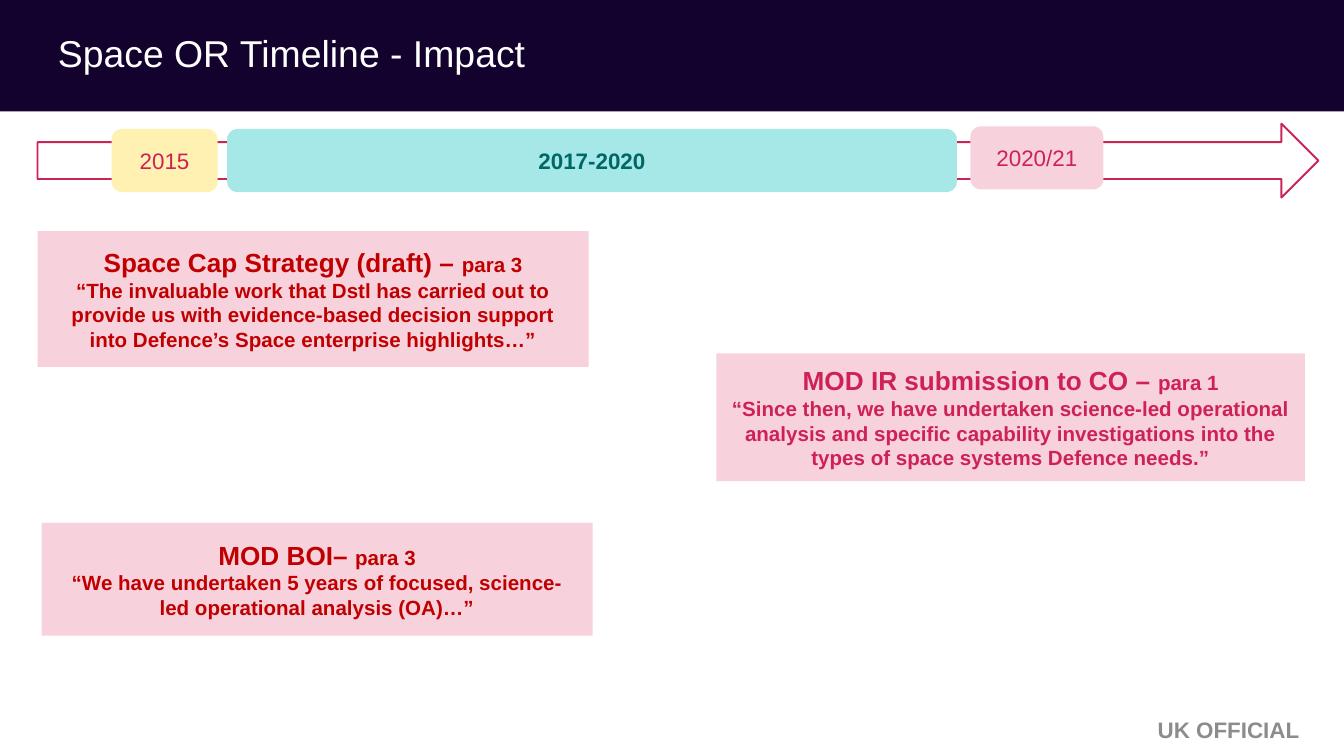
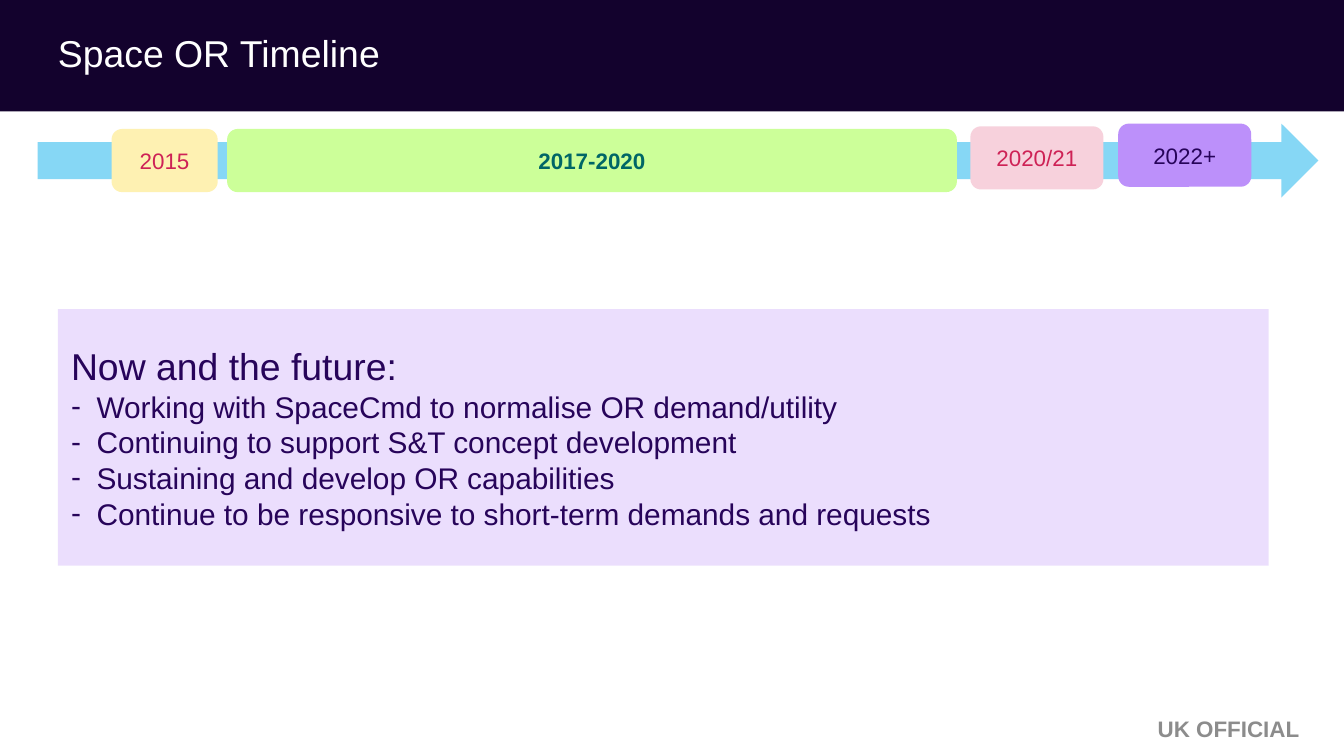
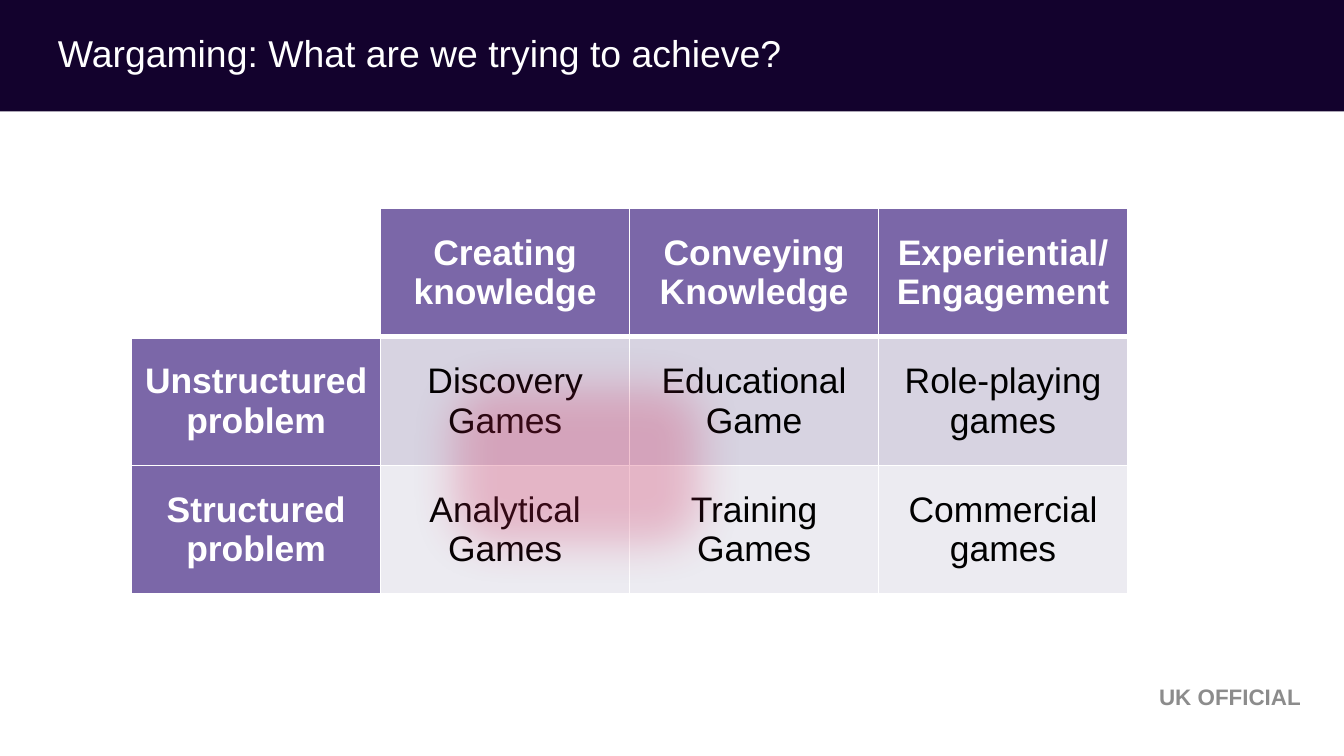
import pptx
import pptx.util
import pptx.oxml
import pptx.oxml.ns
import pptx.dml.color
import pptx.enum.shapes
import pptx.enum.text
from pptx.util import Inches

SHAPE = pptx.enum.shapes.MSO_SHAPE
ALIGN = pptx.enum.text.PP_ALIGN
MIDDLE = pptx.enum.text.MSO_ANCHOR.MIDDLE

NAVY, WHITE, GREY = "13022D", "FFFFFF", "8C8C8C"
PINK, ROSE, RED = "F7D1DC", "CE2256", "C00000"
CREAM, TEAL, VIOLET, PLUM = "FEF1B2", "006666", "BC90FA", "27045A"
HEAD, BODY = "7B67A8", ["D7D3E1", "ECEBF1"]


def rgb(code):
    return pptx.dml.color.RGBColor.from_string(code)


def node(tag, parent, **attrs):
    """Append an empty drawing element to parent."""
    item = pptx.oxml.parse_xml(f"<a:{tag} {pptx.oxml.ns.nsdecls('a')}/>")
    for key, value in attrs.items():
        item.set(key, str(value))
    parent.append(item)
    return item


class Deck:
    font = "Arial"

    def __init__(self):
        self.prs = pptx.Presentation()
        self.prs.slide_width = Inches(10)
        self.prs.slide_height = Inches(10) * 9 // 16
        self.slide = None

    def page(self, title, mark):
        """Start a slide; mark is the box of its marking."""
        self.slide = self.prs.slides.add_slide(self.prs.slide_layouts[5])
        if len(self.prs.slides) == 1:
            self.band()
        head = self.slide.shapes.title
        self.place(head, (0.04, 0.06, 7.48, 0.71))
        frame = head.text_frame
        self.setup(frame, left=0.39)
        frame.text = title
        frame.paragraphs[0].line_spacing = 0.9
        self.style(frame.paragraphs[0], 20, WHITE, align=ALIGN.LEFT)

        frame = self.slide.shapes.add_textbox(*map(Inches, mark)).text_frame
        self.setup(frame, right=0.04)
        frame.text = "UK OFFICIAL"
        self.style(frame.paragraphs[0], 12, GREY, True, ALIGN.RIGHT)

    def band(self):
        """Put the title band on the master, behind everything."""
        bar = self.shape(SHAPE.RECTANGLE, (0, 0, 10, 0.83), NAVY).element
        bar.nvSpPr.cNvPr.id = 100
        self.prs.slide_master.shapes.element.insert(2, bar)

    def place(self, item, box):
        item.left, item.top, item.width, item.height = map(Inches, box)

    def setup(self, frame, left=0.1, right=0.1):
        frame.word_wrap = True
        frame.auto_size = pptx.enum.text.MSO_AUTO_SIZE.NONE
        frame.vertical_anchor = MIDDLE
        frame.margin_left, frame.margin_right = Inches(left), Inches(right)
        frame.margin_top = frame.margin_bottom = Inches(0.05)

    def style(self, para, size, color, bold=False, align=ALIGN.CENTER):
        para.alignment = align
        for run in para.runs:
            font = run.font
            font.name, font.size, font.bold = self.font, pptx.util.Pt(size), bold
            font.color.rgb = rgb(color)

    def shape(self, kind, box, fill, alpha=None, line=None):
        """Add a preset shape; alpha is its opacity in percent."""
        item = self.slide.shapes.add_shape(kind, *map(Inches, box))
        item.shadow.inherit = False
        item.fill.solid()
        item.fill.fore_color.rgb = rgb(fill)
        if alpha:
            tint = item.element.spPr.find(".//" + pptx.oxml.ns.qn("a:srgbClr"))
            node("alpha", tint, val=alpha * 1000)
        if line:
            item.line.color.rgb = rgb(line)
            item.line.width = pptx.util.Pt(1)
        else:
            item.line.fill.background()
        self.setup(item.text_frame)
        return item

    def label(self, text, box, fill, color, bold=False):
        frame = self.shape(SHAPE.ROUNDED_RECTANGLE, box, fill).text_frame
        frame.text = text
        self.style(frame.paragraphs[0], 12, color, bold)

    def track(self, fill, line, middle):
        """Draw the time arrow and the periods both timelines share."""
        self.shape(SHAPE.RIGHT_ARROW, (0.28, 0.92, 9.53, 0.55), fill, line=line)
        self.label("2015", (0.83, 0.96, 0.79, 0.47), CREAM, ROSE)
        self.label("2017-2020", (1.69, 0.96, 5.43, 0.47), middle, TEAL, True)
        self.label("2020/21", (7.22, 0.94, 0.99, 0.47), PINK, ROSE)

    def quote(self, source, para, text, box, color):
        frame = self.shape(SHAPE.RECTANGLE, box, PINK).text_frame
        frame.text = source + "\n" + text
        head, body = frame.paragraphs
        head.add_run().text = para
        for line in (head, body):
            self.style(line, 11, color, True)
        head.runs[0].font.size = pptx.util.Pt(14)

    def panel(self, title, points, box):
        frame = self.shape(SHAPE.RECTANGLE, box, VIOLET, alpha=29).text_frame
        frame.text = "\n".join([title] + points)
        head, *items = frame.paragraphs
        self.style(head, 20, PLUM, align=ALIGN.LEFT)
        for item in items:
            props = item._p.get_or_add_pPr()
            props.set("marL", str(Inches(0.19)))
            props.set("indent", str(-Inches(0.19)))
            node("buFont", props, typeface=self.font)
            node("buChar", props, char="-")
            self.style(item, 16, PLUM, align=ALIGN.LEFT)

    def table(self, rows, box):
        """Add a grid whose first row and column are headings."""
        grid = self.slide.shapes.add_table(
            len(rows), len(rows[0]), *map(Inches, box)).table
        for r, row in enumerate(rows):
            for c, text in enumerate(row):
                self.cell(grid.cell(r, c), r, c, text)

    def cell(self, cell, r, c, text):
        head = r == 0 or c == 0
        cell.text = text
        cell.vertical_anchor = MIDDLE
        cell.margin_left = cell.margin_right = Inches(0.08)
        cell.margin_top = cell.margin_bottom = Inches(0.04)
        self.style(cell.text_frame.paragraphs[0], 19,
                   WHITE if head else "000000", head)
        thick = {"lnB": r == 0, "lnT": r == 1}
        for side in ("lnL", "lnR", "lnT", "lnB"):
            width = pptx.util.Pt(3 if thick.get(side) else 1)
            edge = node(side, cell._tc.get_or_add_tcPr(), w=width)
            node("srgbClr", node("solidFill", edge), val=WHITE)
        cell.fill.solid()
        fill = HEAD if head else BODY[r - 1]
        cell.fill.fore_color.rgb = rgb(fill if text else WHITE)

    def glow(self, box, fill, alpha, blur):
        """Add a soft-edged highlight."""
        item = self.shape(SHAPE.ROUNDED_RECTANGLE, box, fill, alpha)
        effects = item.element.spPr.find(pptx.oxml.ns.qn("a:effectLst"))
        node("softEdge", effects, rad=Inches(blur))


def main():
    deck = Deck()

    deck.page("Space OR Timeline - Impact", (6.75, 5.28, 2.96, 0.3))
    deck.track(WHITE, "CD2456", "A5E8E7")
    deck.quote("Space Cap Strategy (draft) – ", "para 3",
               "“The invaluable work that Dstl has carried out to provide us with "
               "evidence-based decision support into Defence’s Space enterprise "
               "highlights…”", (0.28, 1.72, 4.1, 1.01), RED)
    deck.quote("MOD IR submission to CO – ", "para 1",
               "“Since then, we have undertaken science-led operational analysis "
               "and specific capability investigations into the types of space "
               "systems Defence needs.”", (5.33, 2.63, 4.38, 0.95), ROSE)
    deck.quote("MOD BOI– ", "para 3",
               "“We have undertaken 5 years of focused, science- led operational "
               "analysis (OA)…”", (0.31, 3.89, 4.1, 0.84), RED)

    deck.page("Space OR Timeline", (7.91, 5.27, 1.8, 0.3))
    deck.track("86D7F5", None, "CCFF99")
    deck.label("2022+", (8.32, 0.92, 0.99, 0.47), VIOLET, PLUM)
    deck.panel("Now and the future:", [
        "Working with SpaceCmd to normalise OR demand/utility",
        "Continuing to support S&T concept development",
        "Sustaining and develop OR capabilities",
        "Continue to be responsive to short-term demands and requests",
    ], (0.43, 2.3, 9.01, 1.91))

    deck.page("Wargaming: What are we trying to achieve?", (1.54, 5.03, 8.18, 0.3))
    deck.table([
        ["", "Creating knowledge", "Conveying Knowledge", "Experiential/ Engagement"],
        ["Unstructured problem", "Discovery Games", "Educational Game",
         "Role-playing games"],
        ["Structured problem", "Analytical Games", "Training Games",
         "Commercial games"],
    ], (0.98, 1.55, 7.41, 2.87))
    deck.glow((3.03, 2.54, 2.52, 1.85), "D12556", 27, 0.35)

    deck.prs.save("out.pptx")


if __name__ == "__main__":
    main()
